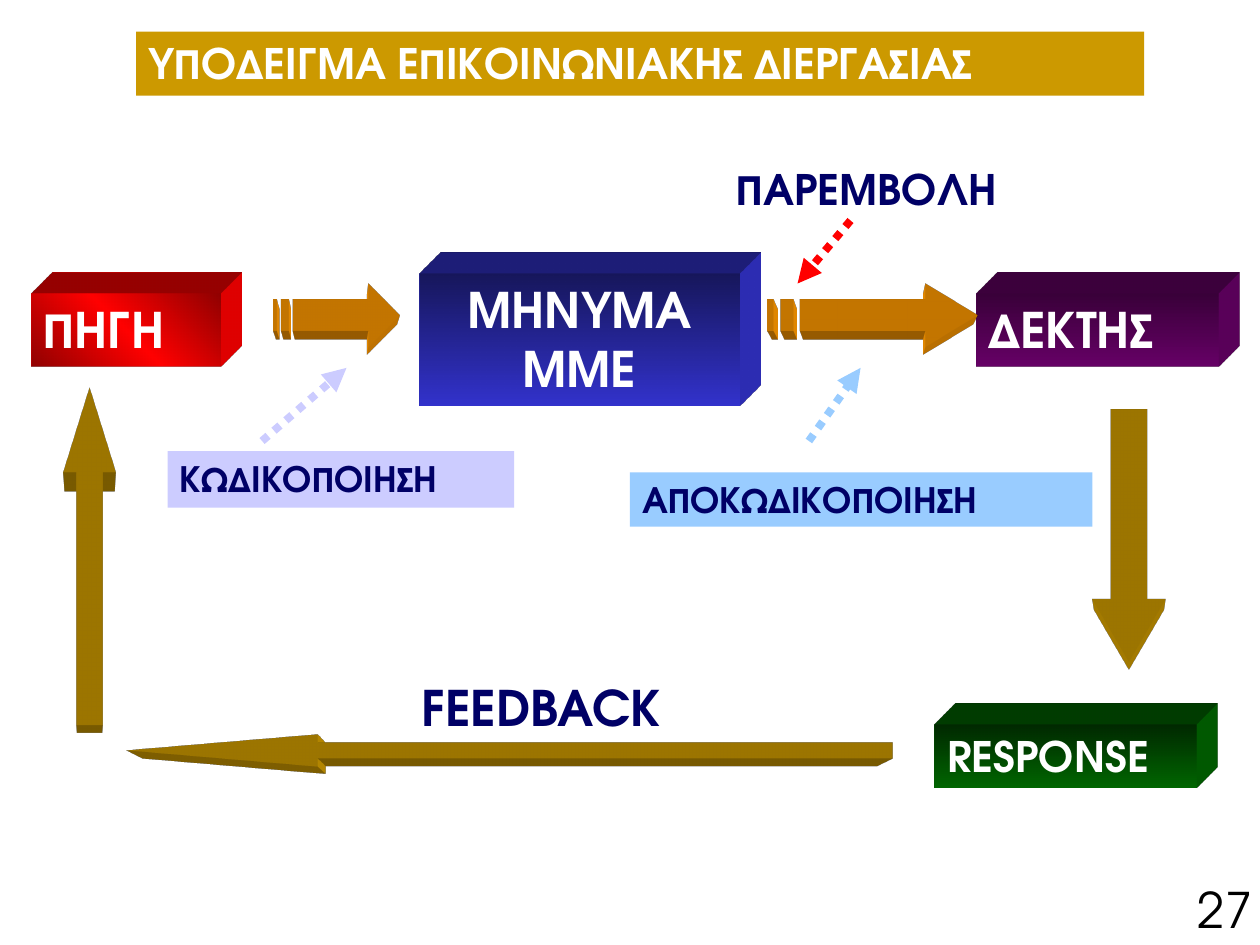
from copy import deepcopy
from pptx import Presentation
from pptx.dml.color import RGBColor as Rgb
from pptx.enum.dml import MSO_LINE as Dash
from pptx.enum.shapes import MSO_CONNECTOR as Link, MSO_SHAPE as Kind
from pptx.enum.text import MSO_ANCHOR as Anchor, PP_ALIGN as Align
from pptx.oxml.ns import qn
from pptx.util import Inches, Pt
from lxml.etree import SubElement

FONT = "TeX Gyre Adventor"
SLANT = "legacyObliqueTopRight"
BELOW = "legacyPerspectiveBottom"
WHITE = Rgb(255, 255, 255)
BLACK = Rgb(0, 0, 0)
NAVY = Rgb(0, 0, 0x66)
GOLD = Rgb(0xCC, 0x99, 0)
ORANGE = Rgb(0xFF, 0x99, 0)
LILAC = Rgb(0xCC, 0xCC, 0xFF)
SKY = Rgb(0x99, 0xCC, 0xFF)
RED = Rgb(255, 0, 0)
WINE = Rgb(0x90, 0, 0)
INK = Rgb(0x17, 0x17, 0x5C)
BLUE = Rgb(0x33, 0x33, 0xCC)
PLUM = Rgb(0x3A, 0, 0x3A)
PURPLE = Rgb(0x66, 0, 0x66)
PINE = Rgb(0, 0x29, 0)
GREEN = Rgb(0, 0x66, 0)


def paint(shape, tones, angle=270):
    shape.shadow.inherit = False
    shape.line.fill.background()
    if len(tones) == 1:
        shape.fill.solid()
        shape.fill.fore_color.rgb = tones[0]
        return
    shape.fill.gradient()
    shape.fill.gradient_angle = angle
    stops = shape._element.spPr.find(".//" + qn("a:gsLst"))
    if len(tones) == 3:
        stops.insert(1, deepcopy(stops[0]))
    for i, (stop, tone) in enumerate(zip(shape.fill.gradient_stops, tones)):
        stop.position = i / (len(tones) - 1)
        stop.color.rgb = tone


def extrude(shape, view, tone):
    props = shape._element.spPr
    scene = SubElement(props, qn("a:scene3d"))
    SubElement(scene, qn("a:camera"), prst=view)
    SubElement(scene, qn("a:lightRig"), rig="legacyFlat3", dir="b")
    solid = SubElement(props, qn("a:sp3d"), extrusionH="430200", prstMaterial="legacyMatte")
    for edge in ("a:bevelT", "a:bevelB"):
        SubElement(solid, qn(edge), w="13500", h="13500", prst="angle")
    side = SubElement(solid, qn("a:extrusionClr"))
    SubElement(side, qn("a:srgbClr"), val=str(tone))


def write(shape, text, size, tone, align=Align.LEFT, bold=True, wrap=True):
    frame = shape.text_frame
    frame.word_wrap = wrap
    frame.vertical_anchor = Anchor.TOP
    para = frame.paragraphs[0]
    para.alignment = align
    para.space_before = Pt(0)
    run = para.add_run()
    run.text = text
    font = run.font
    font.name, font.size, font.bold = FONT, Pt(size), bold
    font.color.rgb = tone


def place(slide, kind, box, *tones, angle=270):
    shape = slide.shapes.add_shape(kind, *map(Inches, box))
    paint(shape, tones, angle)
    return shape


def label(slide, box, text, size, tone, **style):
    write(slide.shapes.add_textbox(*map(Inches, box)), text, size, tone, **style)


def block(slide, box, text, size, tones, side, align=Align.LEFT, angle=270):
    shape = place(slide, Kind.RECTANGLE, box, *tones, angle=angle)
    extrude(shape, SLANT, side)
    write(shape, text, size, WHITE, align)


def tag(slide, box, text, tone):
    write(place(slide, Kind.RECTANGLE, box, tone), text, 20, NAVY)


def striped(slide, x, w, y=2.25):
    top, low, end = y + 0.125, y + 0.375, y + 0.5
    neck, start = x + w * 0.75, x + w * 0.155
    rings = [[(neck, y), (neck, top), (start, top), (start, low),
              (neck, low), (neck, end), (x + w, y + 0.25)]]
    for left, right in ((0.0625, 0.125), (0, 0.03)):
        a, b = x + w * left, x + w * right
        rings.append([(a, top), (a, low), (b, low), (b, top)])
    scaled = [[(px * 1000, py * 1000) for px, py in ring] for ring in rings]
    build = slide.shapes.build_freeform(*scaled[0][0], scale=914.4)
    build.add_line_segments(scaled[0][1:])
    for ring in scaled[1:]:
        build.move_to(*ring[0])
        build.add_line_segments(ring[1:])
    shape = build.convert_to_shape()
    paint(shape, [ORANGE])
    extrude(shape, BELOW, ORANGE)


def arrow(slide, kind, box, ratio):
    shape = place(slide, kind, box, GOLD)
    shape.adjustments[0] = 0.5
    shape.adjustments[1] = ratio
    extrude(shape, BELOW, GOLD)


def pointer(slide, start, end, tone):
    link = slide.shapes.add_connector(Link.STRAIGHT, *map(Inches, start + end))
    link.line.color.rgb = tone
    link.line.width = Pt(4.5)
    link.line.dash_style = Dash.ROUND_DOT
    SubElement(link.line._get_or_add_ln(), qn("a:tailEnd"), type="triangle")
    SubElement(link._element.spPr, qn("a:effectLst"))


def heading(slide):
    title = slide.shapes.title
    title.left, title.top, title.width, title.height = map(Inches, (1.08, 0.25, 8, 0.51))
    paint(title, [GOLD])
    extrude(title, BELOW, GOLD)
    write(title, "ΥΠΟΔΕΙΓΜΑ ΕΠΙΚΟΙΝΩΝΙΑΚΗΣ ΔΙΕΡΓΑΣΙΑΣ", 24, WHITE)


def main():
    deck = Presentation()
    deck.slide_width, deck.slide_height = Inches(10), Inches(7.5)
    slide = deck.slides.add_slide(deck.slide_layouts[5])
    heading(slide)

    block(slide, (0.25, 2.33, 1.5, 0.58), "ΠΗΓΗ", 28, (WINE, RED, WINE), RED, angle=45)
    block(slide, (3.33, 2.17, 2.54, 1.05), "ΜΗΝΥΜΑ ΜΜΕ", 28, (INK, BLUE), BLUE, Align.CENTER)
    block(slide, (7.75, 2.33, 1.92, 0.58), "ΔΕΚΤΗΣ", 28, (PLUM, PURPLE), PURPLE)
    label(slide, (5.75, 1.25, 2.83, 0.5), "ΠΑΡΕΜΒΟΛΗ", 24, NAVY)
    tag(slide, (1.33, 3.58, 2.75, 0.45), "ΚΩΔΙΚΟΠΟΙΗΣΗ", LILAC)
    tag(slide, (5, 3.75, 3.67, 0.43), "ΑΠΟΚΩΔΙΚΟΠΟΙΗΣΗ", SKY)
    label(slide, (3.25, 5.33, 3.09, 0.57), "FEEDBACK", 28, NAVY)
    block(slide, (7.42, 5.75, 2.08, 0.5), "RESPONSE", 24, (PINE, GREEN), GREEN)

    striped(slide, 2.17, 1)
    striped(slide, 6.09, 1.67)
    arrow(slide, Kind.DOWN_ARROW, (8.67, 3.25, 0.58, 2), 0.86)
    arrow(slide, Kind.LEFT_ARROW, (1, 5.83, 6.08, 0.25), 6.08)
    arrow(slide, Kind.UP_ARROW, (0.5, 3.08, 0.42, 2.67), 1.6)

    pointer(slide, (2.08, 3.5), (2.75, 2.92), LILAC)
    pointer(slide, (6.42, 3.5), (6.83, 2.92), SKY)
    pointer(slide, (6.75, 1.75), (6.33, 2.25), RED)
    label(slide, (9.41, 6.93, 0.64, 0.57), "27", 28, BLACK, bold=False, wrap=False)
    deck.save("out.pptx")


if __name__ == "__main__":
    main()
